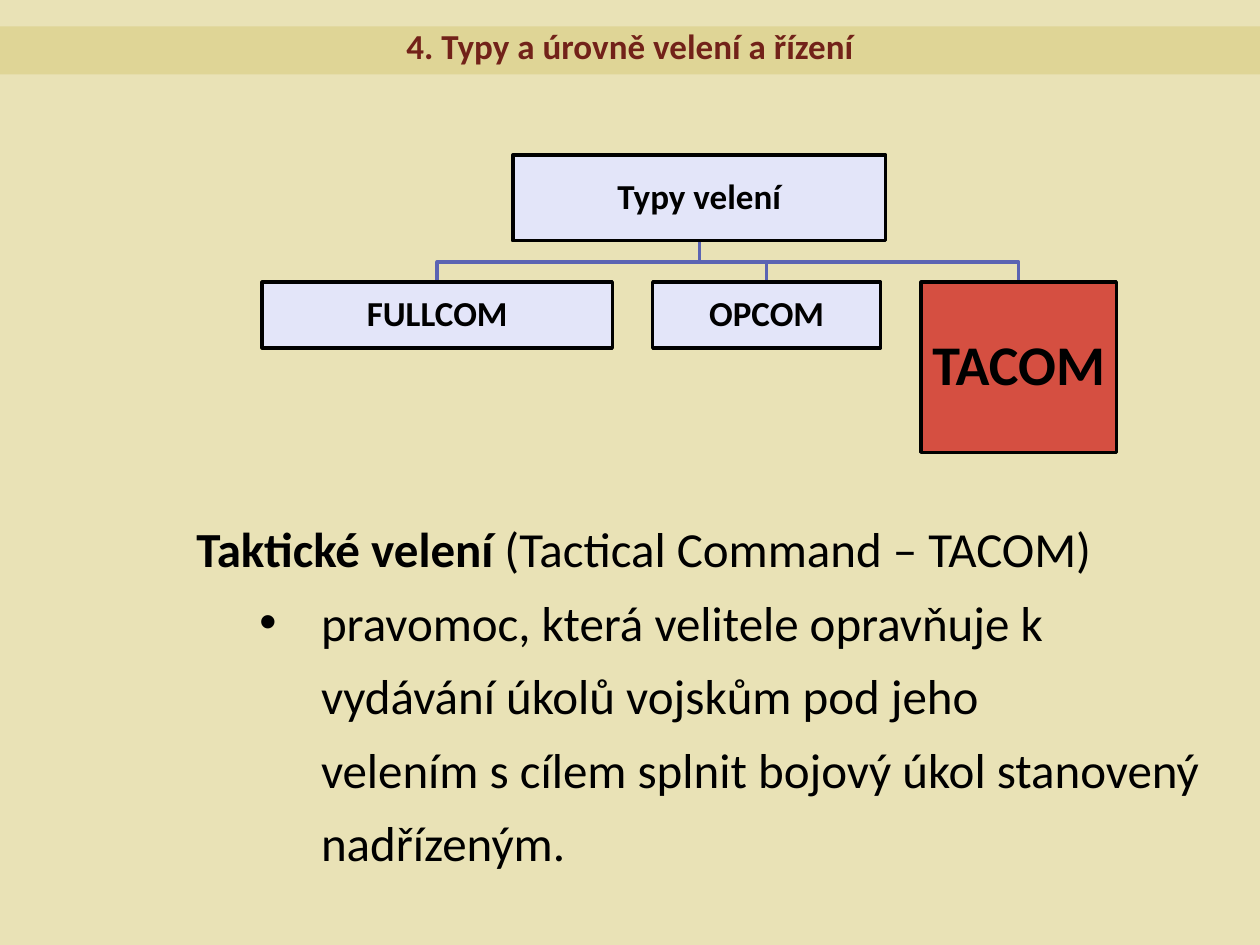
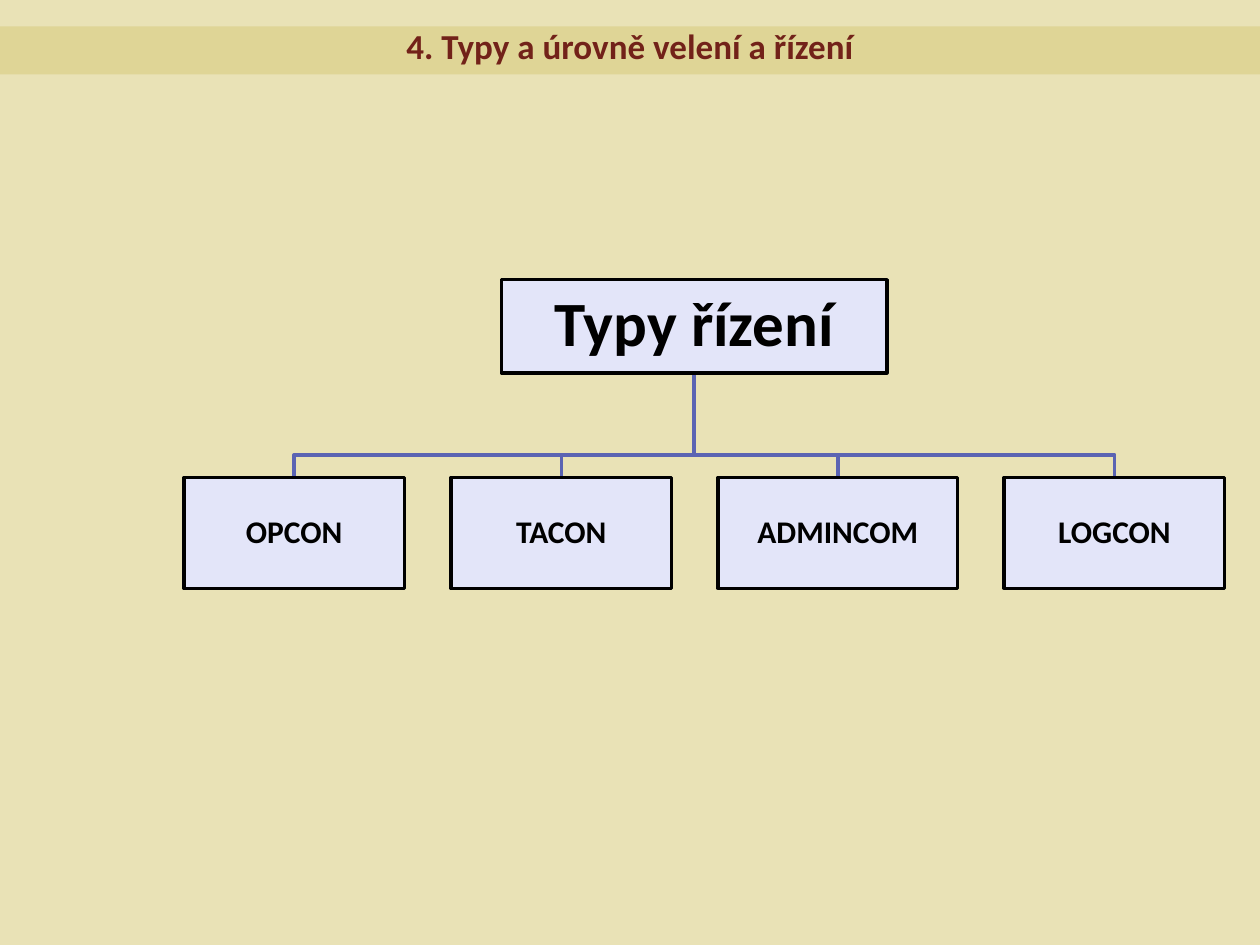
from lxml.etree import SubElement
from pptx import Presentation
from pptx.dml.color import RGBColor
from pptx.enum.shapes import MSO_SHAPE
from pptx.enum.text import MSO_ANCHOR, PP_ALIGN
from pptx.oxml.ns import qn
from pptx.util import Inches, Pt

PAPER, BAND, WINE = "E9E2B6", "DFD596", "722219"
PALE, RED, BLUE, BLACK = "E3E5F9", "D54F41", "5B64B3", "000000"
TITLE = "4. Typy a úrovně velení a řízení"


def rgb(code):
    return RGBColor.from_string(code)


def add_box(slide, place, text, size, fill, ink=BLACK, edge=None, inset=0.01, leading=0.9):
    """Draw a filled rectangle with bold centred text."""
    box = slide.shapes.add_shape(MSO_SHAPE.RECTANGLE, *map(Inches, place))
    box.shadow.inherit = False
    box.fill.solid()
    box.fill.fore_color.rgb = rgb(fill)
    if edge:
        box.line.color.rgb = rgb(edge)
        box.line.width = Pt(2)
    else:
        box.line.fill.background()
    frame = box.text_frame
    frame.word_wrap = True
    for side in ("left", "top", "right", "bottom"):
        setattr(frame, f"margin_{side}", Inches(inset))
    para = frame.paragraphs[0]
    para.alignment = PP_ALIGN.CENTER
    para.line_spacing = leading
    run = para.add_run()
    run.text = text
    for key, value in {"name": "Calibri", "size": Pt(size), "bold": True}.items():
        setattr(run.font, key, value)
    run.font.color.rgb = rgb(ink)
    return box


# Each leaf: label, width, height, text size, fill
trees = [
    {
        "root": ("Typy velení", 4.07, 1.23, 2.96, 0.68, 20),
        "left": 2.08, "top": 2.24, "gap": 0.32, "bend": 2.08,
        "leaves": [
            ("FULLCOM", 2.78, 0.52, 20, PALE),
            ("OPCOM", 1.81, 0.52, 20, PALE),
            ("TACOM", 1.55, 1.35, 32, RED),
        ],
    },
    {
        "root": ("Typy řízení", 3.98, 2.22, 3.06, 0.74, 36),
        "left": 1.46, "top": 3.79, "gap": 0.37, "bend": 3.61,
        "leaves": [
            ("OPCON", 1.75, 0.88, 18, PALE),
            ("TACON", 1.75, 0.88, 18, PALE),
            ("ADMINCOM", 1.9, 0.88, 18, PALE),
            ("LOGCON", 1.75, 0.88, 18, PALE),
        ],
    },
]

deck = Presentation()
deck.slide_width, deck.slide_height = Inches(10), Inches(7.5)

for tree in trees:
    slide = deck.slides.add_slide(deck.slide_layouts[6])
    slide.background.fill.solid()
    slide.background.fill.fore_color.rgb = rgb(PAPER)
    band = add_box(slide, (0, 0.21, 10, 0.38), TITLE, 20, BAND, WINE, inset=0.05, leading=0.8)
    band.text_frame.vertical_anchor = MSO_ANCHOR.TOP

    label, x, y, wide, high, size = tree["root"]
    stem, foot = x + wide / 2, y + high
    top, bend = tree["top"], tree["bend"]

    # Branches lie behind the boxes
    left = tree["left"]
    for leaf in tree["leaves"]:
        mid = left + leaf[1] / 2
        path = slide.shapes.build_freeform(Inches(stem), Inches(foot))
        turns = [(stem, bend), (mid, bend), (mid, top)]
        path.add_line_segments([(Inches(a), Inches(b)) for a, b in turns], close=False)
        branch = path.convert_to_shape()
        branch.shadow.inherit = False
        branch.fill.background()
        branch.line.color.rgb = rgb(BLUE)
        branch.line.width = Pt(2)
        left += leaf[1] + tree["gap"]

    add_box(slide, (x, y, wide, high), label, size, PALE, edge=BLACK)
    left = tree["left"]
    for name, wide, high, size, fill in tree["leaves"]:
        add_box(slide, (left, top, wide, high), name, size, fill, edge=BLACK)
        left += wide + tree["gap"]

# Definition under the first tree
note = deck.slides[0].shapes.add_textbox(*map(Inches, (1.46, 3.95, 8.27, 3.05)))
frame = note.text_frame
frame.word_wrap = True
head, item = frame.paragraphs[0], frame.add_paragraph()
item.level = 1
props = item._p.get_or_add_pPr()
props.set("marL", str(Inches(0.99)))
props.set("indent", str(Inches(-0.49)))
SubElement(props, qn("a:buFont"), typeface="Arial")
SubElement(props, qn("a:buChar"), char="•")
parts = [
    (head, "Taktické velení ", True),
    (head, "(Tactical Command – TACOM)", False),
    (item, "pravomoc, která velitele opravňuje k vydávání úkolů vojskům pod jeho", False),
    (item, "velením s cílem splnit bojový úkol stanovený nadřízeným.", False),
]
for para, text, bold in parts:
    if para is item and para.runs:
        para.add_line_break()
    para.line_spacing = 1.25
    run = para.add_run()
    run.text = text
    for key, value in {"name": "Calibri", "size": Pt(28), "bold": bold}.items():
        setattr(run.font, key, value)
    run.font.color.rgb = rgb(BLACK)

deck.save("out.pptx")
